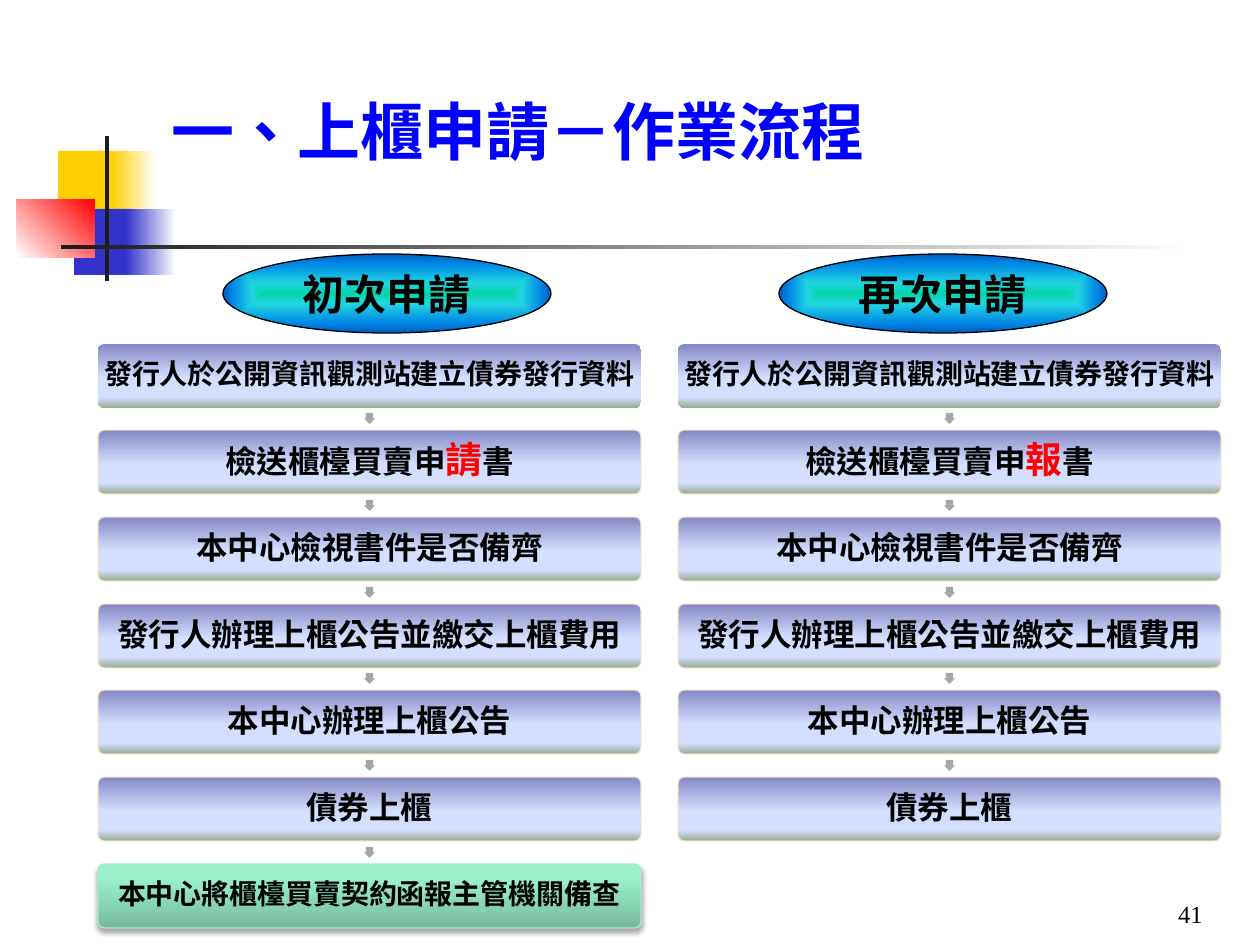
from lxml import etree
from pptx import Presentation
from pptx.dml.color import RGBColor
from pptx.enum.shapes import MSO_SHAPE
from pptx.enum.text import MSO_ANCHOR, PP_ALIGN
from pptx.oxml import parse_xml
from pptx.oxml.ns import nsdecls, qn
from pptx.util import Pt

RECT, ROUNDED, OVAL, ARROW = (MSO_SHAPE.RECTANGLE, MSO_SHAPE.ROUNDED_RECTANGLE,
                              MSO_SHAPE.OVAL, MSO_SHAPE.RIGHT_ARROW)
LEFT, CENTER, RIGHT = PP_ALIGN.LEFT, PP_ALIGN.CENTER, PP_ALIGN.RIGHT
MIDDLE, BOTTOM = MSO_ANCHOR.MIDDLE, MSO_ANCHOR.BOTTOM
SANS, SERIF = "Noto Sans CJK SC", "Times New Roman"
COLORS = {
    "white": "FFFFFF", "black": "000000", "ink": "1C1C1C", "red": "FF0000",
    "yellow": "FFCF01", "indigo": "3333CC", "title": "0000FF", "arrow": "A6A6A6",
    "step_top": "8488C4", "step_mid": "D4DEFF", "step_base": "96AB94", "step_edge": "F6E7CC",
    "report_base": "77BA9D", "report_mid": "9BF2CC", "report_top": "9AF4CD",
    "report_edge": "A5EBCD",
    "oval_core": "03D4A8", "oval_inner": "21D6E0", "oval_outer": "0087E6", "oval_rim": "005CBF",
}
STEP_FILL = [(0, "step_top"), (53, "step_mid"), (83, "step_mid"), (100, "step_base")]
REPORT_FILL = [(0, "report_base"), (80, "report_mid"), (100, "report_top")]
OVAL_FILL = [(0, "oval_core"), (25, "oval_inner"), (75, "oval_outer"), (100, "oval_rim")]


class Deck:
    def __init__(self, width, height, px_per_inch):
        self.scale = 914400 / px_per_inch
        self.prs = Presentation()
        self.prs.slide_width, self.prs.slide_height = self.emu(width, height)
        self.slide = self.prs.slides.add_slide(self.prs.slide_layouts[6])

    def emu(self, *lengths):
        return [round(length * self.scale) for length in lengths]

    def color(self, name):
        return RGBColor.from_string(COLORS[name])

    def gradient(self, shape, stops, angle):
        stop_xml = "".join(f'<a:gs pos="{pos * 1000}"><a:srgbClr val="{COLORS[name]}"/></a:gs>'
                           for pos, name in stops)
        if angle is None:
            course = ('<a:path path="shape"><a:fillToRect l="50000" t="50000" '
                      'r="50000" b="50000"/></a:path>')
        else:
            course = f'<a:lin ang="{angle * 60000}" scaled="0"/>'
        fill = parse_xml(f'<a:gradFill {nsdecls("a")} rotWithShape="1">'
                         f'<a:gsLst>{stop_xml}</a:gsLst>{course}</a:gradFill>')
        shape._element.spPr.find(qn("a:prstGeom")).addnext(fill)

    def shape(self, kind, box, fill, angle=0, edge=None, edge_alpha=100):
        shape = self.slide.shapes.add_shape(kind, *self.emu(*box))
        shape.shadow.inherit = False
        if isinstance(fill, str):
            shape.fill.solid()
            shape.fill.fore_color.rgb = self.color(fill)
        else:
            self.gradient(shape, fill, angle)
        if edge:
            shape.line.width = Pt(0.75)
            shape.line.color.rgb = self.color(edge)
            edge_color = shape._element.spPr.find(f'{qn("a:ln")}//{qn("a:srgbClr")}')
            etree.SubElement(edge_color, qn("a:alpha"), val=str(edge_alpha * 1000))
        else:
            shape.line.fill.background()
        return shape

    def drop_shadow(self, shape):
        effects = shape._element.spPr.find(qn("a:effectLst"))
        effects.append(parse_xml(
            f'<a:outerShdw {nsdecls("a")} blurRad="{Pt(3.1)}" dist="{Pt(1.8)}" dir="5400000" '
            f'rotWithShape="0"><a:srgbClr val="{COLORS["black"]}"><a:alpha val="35000"/>'
            '</a:srgbClr></a:outerShdw>'))

    def set_runs(self, shape, runs, font, align=CENTER, anchor=MIDDLE, bold=True,
                 wrap=True, inset=None, spacing=None):
        frame = shape.text_frame
        frame.word_wrap = wrap
        frame.vertical_anchor = anchor
        if inset is not None:
            frame.margin_left, frame.margin_top, frame.margin_right, frame.margin_bottom = (
                self.emu(*[inset] * 4))
        paragraph = frame.paragraphs[0]
        paragraph.alignment = align
        if spacing:
            paragraph.line_spacing = spacing
        for words, size, color in runs:
            run = paragraph.add_run()
            run.text = words
            run.font.size = Pt(size)
            run.font.bold = bold
            run.font.color.rgb = self.color(color)
            run.font.name = font
            properties = run._r.get_or_add_rPr()
            properties.set("lang", "zh-TW")
            properties.find(qn("a:latin")).addnext(
                parse_xml(f'<a:ea {nsdecls("a")} typeface="{SANS}"/>'))

    def text(self, box, words, size, color, font, align, bold):
        label = self.slide.shapes.add_textbox(*self.emu(*box))
        self.set_runs(label, [(words, size, color)], font, align, BOTTOM, bold)

    def heading(self, box, words):
        oval = self.shape(OVAL, box, OVAL_FILL, None, "black")
        self.set_runs(oval, [(words, 24, "black")], SANS, wrap=False)

    def step(self, box, runs, edge, report=False):
        if report:
            card = self.shape(ROUNDED, box, REPORT_FILL, 270, edge)
            self.drop_shadow(card)
        else:
            card = self.shape(ROUNDED, box, STEP_FILL, 90, edge, 90)
        card.adjustments[0] = 0.1
        self.set_runs(card, runs, SERIF, inset=4, spacing=0.9)

    def arrow(self, box):
        arrow = self.shape(ARROW, box, "arrow")
        arrow.rotation = 90
        arrow.adjustments[0] = 0.667
        arrow.adjustments[1] = 0.5

    def flow(self, left, steps):
        width, height, first_top = 543, 64, 344
        for index, (runs, edge, report) in enumerate(steps):
            top = first_top + 260 * index // 3
            if index:
                self.arrow((left + width // 2 - 5, top - 17, 11, 11))
            self.step((left, top, width, height), runs, edge, report)


def flow_steps(key_character):
    request = [("檢送櫃檯買賣申", 18, "black"), (key_character, 21, "red"), ("書", 18, "black")]
    common = ["本中心檢視書件是否備齊", "發行人辦理上櫃公告並繳交上櫃費用",
              "本中心辦理上櫃公告", "債券上櫃"]
    opening = [("發行人於公開資訊觀測站建立債券發行資料", 16, "black")]
    return ([(opening, None, False), (request, "step_edge", False)]
            + [([(words, 18, "black")], "step_edge", False) for words in common])


def main():
    deck = Deck(1260, 945, 126)
    for box, fill, angle in [
        ((58, 151, 60, 66), "yellow", 0),
        ((111, 151, 45, 66), [(0, "yellow"), (100, "white")], 0),
        ((74, 209, 58, 66), "indigo", 0),
        ((126, 209, 50, 66), [(0, "indigo"), (100, "white")], 0),
        ((17, 199, 78, 59), [(0, "white"), (100, "red")], 315),
        ((105, 136, 4, 145), "ink", 0),
        ((61, 245, 1134, 4), [(0, "ink"), (100, "white")], 0),
    ]:
        deck.shape(RECT, box, fill, angle)

    deck.text((159, 74, 1091, 100), "一、上櫃申請－作業流程", 36, "title", SANS, LEFT, True)
    deck.text((953, 872, 262, 63), "41", 14, "black", SERIF, RIGHT, False)

    report = ([("本中心將櫃檯買賣契約函報主管機關備查", 16, "black")], "report_edge", True)
    deck.flow(98, flow_steps("請") + [report])
    deck.flow(678, flow_steps("報"))
    for left, words in [(223, "初次申請"), (779, "再次申請")]:
        deck.heading((left, 254, 328, 79), words)

    deck.prs.save("out.pptx")


if __name__ == "__main__":
    main()
